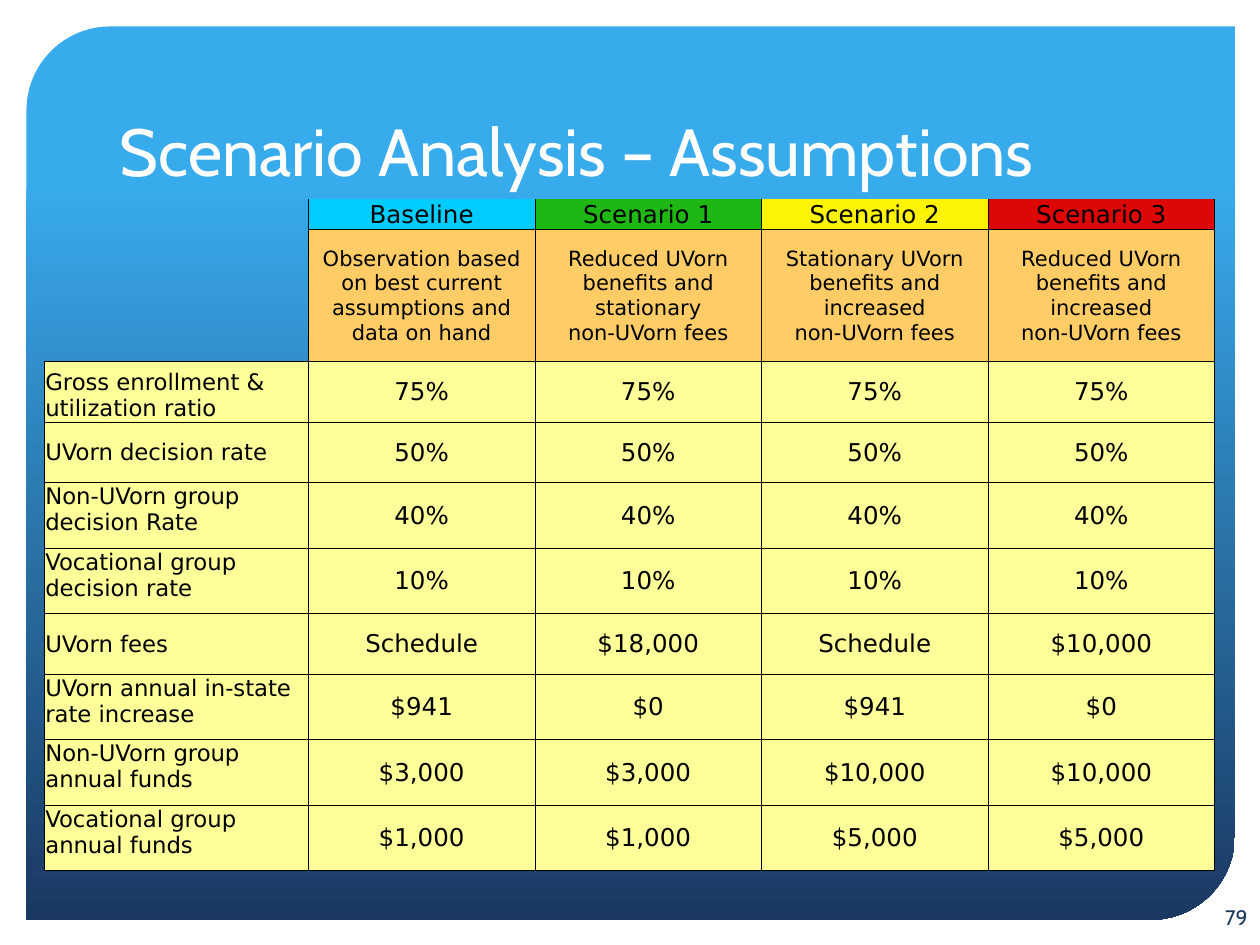
from lxml import etree
from pptx import Presentation
from pptx.dml.color import RGBColor
from pptx.enum.shapes import MSO_SHAPE
from pptx.enum.text import MSO_ANCHOR, MSO_AUTO_SIZE, PP_ALIGN
from pptx.oxml.ns import qn
from pptx.util import Inches, Pt

TOP, MID, LOW = MSO_ANCHOR.TOP, MSO_ANCHOR.MIDDLE, MSO_ANCHOR.BOTTOM
LEFT, MIDDLE, RIGHT = PP_ALIGN.LEFT, PP_ALIGN.CENTER, PP_ALIGN.RIGHT
PANEL = MSO_SHAPE.ROUND_2_DIAG_RECTANGLE
FIXED = MSO_AUTO_SIZE.NONE

HUES = {
    "sky": "38ABED", "navy": "1B3861", "white": "FFFFFF", "black": "000000",
    "cyan": "00CCFF", "green": "1FB714", "yellow": "FCF305", "red": "DD0806",
    "orange": "FFCC66", "cream": "FFFF99",
}
HEADS = ["cyan", "green", "yellow", "red"]
COLS = [2.1] + [1.8] * 4
# Each row: height, anchor of its label, texts
ROWS = [
    (0.24, LOW, ["", "Baseline", "Scenario 1", "Scenario 2", "Scenario 3"]),
    (1.05, MID, ["", "Observation based on best current assumptions and data on hand",
                 "Reduced UVorn benefits and stationary\vnon-UVorn fees",
                 "Stationary UVorn benefits and increased\vnon-UVorn fees",
                 "Reduced UVorn benefits and increased\vnon-UVorn fees"]),
    (0.48, LOW, ["Gross enrollment & utilization ratio"] + ["75%"] * 4),
    (0.48, MID, ["UVorn decision rate"] + ["50%"] * 4),
    (0.52, TOP, ["Non-UVorn group decision Rate"] + ["40%"] * 4),
    (0.52, TOP, ["Vocational group decision rate"] + ["10%"] * 4),
    (0.48, MID, ["UVorn fees", "Schedule", "$18,000", "Schedule", "$10,000"]),
    (0.52, TOP, ["UVorn annual in-state rate increase", "$941", "$0", "$941", "$0"]),
    (0.52, TOP, ["Non-UVorn group annual funds",
                 "$3,000", "$3,000", "$10,000", "$10,000"]),
    (0.52, TOP, ["Vocational group annual funds",
                 "$1,000", "$1,000", "$5,000", "$5,000"]),
]


def hue(name):
    return RGBColor.from_string(HUES[name])


def write(frame, text, size, face, color, align):
    para = frame.paragraphs[0]
    para.text = text
    para.alignment = align
    para.font.size = Pt(size)
    para.font.name = face
    para.font.color.rgb = hue(color)


def add_panel(slide, box):
    panel = slide.shapes.add_shape(PANEL, *box)
    panel.shadow.inherit = False
    panel.adjustments[0], panel.adjustments[1] = 0.094, 0
    panel.line.fill.background()
    panel.fill.gradient()
    panel.fill.gradient_angle = 270
    stops = panel.fill.gradient_stops
    for stop, name, place in zip(stops, ["sky", "navy"], [0.17, 1]):
        stop.color.rgb = hue(name)
        stop.position = place
    slide.shapes._spTree.insert(2, panel._element)


def set_title(slide, box, text):
    title = slide.shapes.title
    title.left, title.top, title.width, title.height = box
    frame = title.text_frame
    frame.auto_size = FIXED
    frame.vertical_anchor = LOW
    write(frame, text, 38, "Cabin", "white", LEFT)


def add_rules(cell, row, col):
    """Draw the cell's borders; the corner and the table's top edge stay open."""
    corner = row < 2 and col == 0
    props = cell._tc.get_or_add_tcPr()
    for spot, side in enumerate("LRTB"):
        drawn = side == "R" or (side == "B" and row == 1) if corner else True
        if row == 0 and side == "T":
            drawn = False
        heavy = not corner and (row, side) in [(0, "B"), (1, "T")]
        line = etree.Element(qn("a:ln" + side), w=str(Pt(1 if heavy else 0.5)))
        if drawn:
            fill = etree.SubElement(line, qn("a:solidFill"))
            etree.SubElement(fill, qn("a:srgbClr"), val=HUES["black"])
        else:
            etree.SubElement(line, qn("a:noFill"))
        props.insert(spot, line)


def fill_cell(cell, row, col, text, anchor):
    cell.margin_left = cell.margin_right = cell.margin_top = Inches(0.01)
    cell.margin_bottom = 0
    if row < 2 and col == 0:
        cell.fill.background()
    else:
        cell.fill.solid()
        shade = HEADS[col - 1] if row == 0 else "orange" if row == 1 else "cream"
        cell.fill.fore_color.rgb = hue(shade)
    label = col == 0
    cell.vertical_anchor = anchor if label or row < 2 else MID
    size = 12 if row == 1 else 13 if label and row else 14
    write(cell.text_frame, text, size, "DejaVu Sans", "black",
          LEFT if label else MIDDLE)
    add_rules(cell, row, col)


def add_grid(slide, box):
    left, top, width, height = box
    table = slide.shapes.add_table(len(ROWS), len(COLS), *box).table
    table.first_row = table.horz_banding = False
    for col, share in zip(table.columns, COLS):
        col.width = int(width * share / sum(COLS))
    total = sum(row[0] for row in ROWS)
    for row, (share, anchor, texts) in enumerate(ROWS):
        table.rows[row].height = int(height * share / total)
        for col, text in enumerate(texts):
            fill_cell(table.cell(row, col), row, col, text, anchor)


def add_number(slide, box, text):
    frame = slide.shapes.add_textbox(*box).text_frame
    frame.word_wrap = True
    frame.vertical_anchor = MID
    write(frame, text, 12, "Cabin", "navy", RIGHT)


def main():
    deck = Presentation()
    deck.slide_width, deck.slide_height = Inches(10), Inches(7.5)
    slide = deck.slides.add_slide(deck.slide_layouts[5])

    def box(*sizes):
        return [Inches(size) for size in sizes]

    add_panel(slide, box(0.21, 0.21, 9.59, 7.09))
    set_title(slide, box(0.85, 0.42, 8.29, 1.14), "Scenario Analysis – Assumptions")
    add_grid(slide, box(0.35, 1.58, 9.29, 5.33))
    add_number(slide, box(9.46, 7.08, 0.54, 0.4), "79")
    deck.save("out.pptx")


if __name__ == "__main__":
    main()
